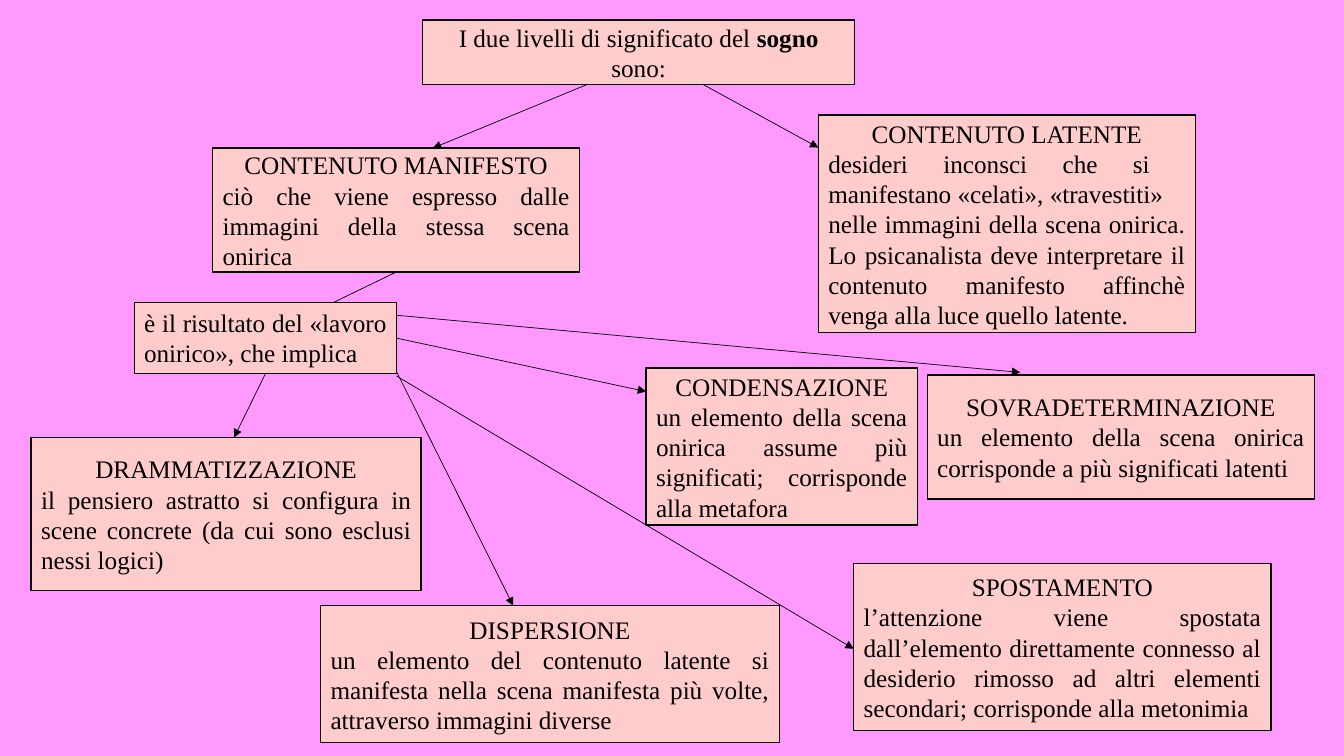
"""Concept map of the two levels of meaning of a dream."""
from lxml.etree import SubElement
from pptx import Presentation
from pptx.dml.color import RGBColor
from pptx.enum.shapes import MSO_CONNECTOR, MSO_SHAPE
from pptx.enum.text import MSO_ANCHOR, PP_ALIGN
from pptx.oxml.ns import qn
from pptx.util import Pt

PINK, PEACH, BLACK = "FF99FF", "FFCCCC", "000000"
FONT, TEXT_SIZE = "Times New Roman", 18

BOXES = {
    "sogno": (301.7, 14.4, 308.9, 46.1),
    "manifesto": (151.9, 105.8, 262.1, 88.6),
    "latente": (584.6, 82.1, 269.3, 155.5),
    "lavoro": (95.8, 216, 187.5, 51.1),
    "drammatizzazione": (22.3, 312.5, 278.6, 109.4),
    "condensazione": (461.5, 262.8, 193.7, 112.3),
    "sovradeterminazione": (662.4, 267.8, 276.5, 88.6),
    "dispersione": (229, 432.7, 327.6, 97.9),
    "spostamento": (609.8, 402.5, 298.1, 119.5),
}
CONCEPTS = {
    "manifesto": ["CONTENUTO MANIFESTO",
                  "ciò che viene espresso dalle immagini della stessa scena onirica"],
    "latente": ["CONTENUTO LATENTE",
                "desideri inconsci che si  manifestano «celati», «travestiti»",
                "nelle immagini della scena onirica. Lo psicanalista deve interpretare "
                "il contenuto manifesto affinchè venga alla luce quello latente."],
    "drammatizzazione": ["DRAMMATIZZAZIONE",
                         "il pensiero astratto si configura in scene concrete "
                         "(da cui sono esclusi nessi logici)"],
    "condensazione": ["CONDENSAZIONE",
                      "un elemento della scena onirica assume più significati; "
                      "corrisponde alla metafora"],
    "sovradeterminazione": ["SOVRADETERMINAZIONE",
                            "un elemento della scena onirica corrisponde a più "
                            "significati latenti"],
    "dispersione": ["DISPERSIONE",
                    "un elemento del contenuto latente si manifesta nella scena "
                    "manifesta più volte, attraverso immagini diverse"],
    "spostamento": ["SPOSTAMENTO",
                    "l’attenzione viene spostata dall’elemento direttamente connesso "
                    "al desiderio rimosso ad altri elementi secondari; corrisponde "
                    "alla metonimia"],
}
# Each link: box and fraction of its width and height, at both ends, then arrowhead.
LINKS = [
    ("sogno", 0.38, 1, "manifesto", 0.6, 0, True),
    ("sogno", 0.65, 1, "latente", 0, 0.15, True),
    ("lavoro", 0.5, 1, "drammatizzazione", 0.52, 0, True),
    ("lavoro", 1, 0.5, "condensazione", 0, 0.15, True),
    ("lavoro", 1, 0.18, "sovradeterminazione", 0.24, -0.02, True),
    ("lavoro", 1, 0.97, "dispersione", 0.42, 0, True),
    ("lavoro", 1, 1.03, "spostamento", 0, 0.51, True),
    ("manifesto", 0.5, 1, "lavoro", 0.76, 0, False),
]


def color(value):
    return RGBColor.from_string(value)


def add_text(para, text, bold=False, align=PP_ALIGN.JUSTIFY):
    para.alignment = align
    span = para.add_run()
    span.text = text
    span.font.name, span.font.size, span.font.bold = FONT, Pt(TEXT_SIZE), bold
    span.font.color.rgb = color(BLACK)


def add_box(page, name, line_width=1, anchor=MSO_ANCHOR.MIDDLE):
    box = page.shapes.add_shape(MSO_SHAPE.RECTANGLE, *map(Pt, BOXES[name]))
    box.shadow.inherit = False
    box.fill.solid()
    box.fill.fore_color.rgb = color(PEACH)
    box.line.color.rgb = color(BLACK)
    box.line.width = Pt(line_width)
    box.text_frame.word_wrap = True
    box.text_frame.vertical_anchor = anchor
    return box.text_frame


def point_on(name, across, down):
    left, top, width, height = BOXES[name]
    return Pt(left + across * width), Pt(top + down * height)


def add_link(page, start, end, arrow):
    link = page.shapes.add_connector(MSO_CONNECTOR.STRAIGHT, *start, *end)
    link.line.color.rgb = color(BLACK)
    link.line.width = Pt(0.5)
    if arrow:
        SubElement(link.line._get_or_add_ln(), qn("a:tailEnd"), type="triangle")
    SubElement(link._element.spPr, qn("a:effectLst"))


def main():
    deck = Presentation()
    deck.slide_width, deck.slide_height = Pt(960), Pt(540)
    page = deck.slides.add_slide(deck.slide_layouts[6])
    page.background.fill.solid()
    page.background.fill.fore_color.rgb = color(PINK)

    title = add_box(page, "sogno").paragraphs[0]
    for text, bold in [("I due livelli di significato del ", False),
                       ("sogno ", True), ("sono:", False)]:
        add_text(title, text, bold=bold, align=PP_ALIGN.CENTER)

    work = add_box(page, "lavoro", line_width=0.75, anchor=MSO_ANCHOR.TOP)
    add_text(work.paragraphs[0], "è il risultato del «lavoro onirico», che implica ")

    for name, (heading, *lines) in CONCEPTS.items():
        frame = add_box(page, name)
        add_text(frame.paragraphs[0], heading, align=PP_ALIGN.CENTER)
        for line in lines:
            add_text(frame.add_paragraph(), line)

    for source, across, down, target, end_across, end_down, arrow in LINKS:
        add_link(page, point_on(source, across, down),
                 point_on(target, end_across, end_down), arrow)

    deck.save("out.pptx")


if __name__ == "__main__":
    main()
